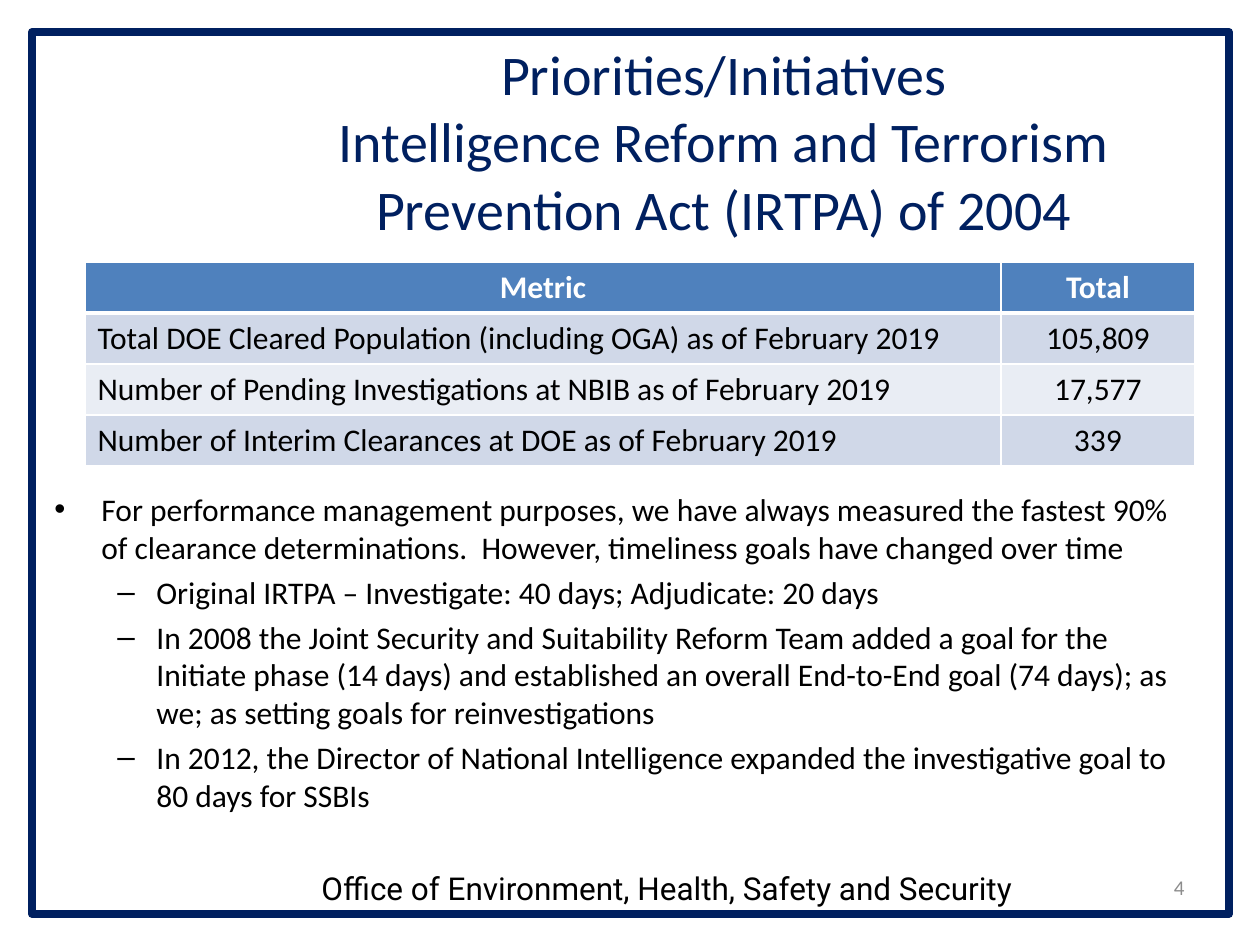
from dataclasses import dataclass

from lxml.etree import SubElement
from pptx import Presentation
from pptx.dml.color import RGBColor
from pptx.enum.shapes import MSO_SHAPE
from pptx.enum.text import MSO_ANCHOR, PP_ALIGN
from pptx.oxml.ns import qn
from pptx.util import Emu, Pt


@dataclass(frozen=True)
class Theme:
    font: str = "Calibri"
    footer_font: str = "Roboto"
    navy: str = "002060"
    black: str = "000000"
    white: str = "FFFFFF"
    gray: str = "8C8C8C"
    header: str = "4F81BD"
    bands: tuple = ("D0D8E8", "E9EDF4")
    title_size: int = 32
    body_size: int = 18
    number_size: int = 12


def px(length):
    return Emu(round(length * 914400 / 126))


class SlideBuilder:
    def __init__(self, slide, theme):
        self.slide = slide
        self.theme = theme

    def style(self, para, size, color, font=None, bold=False):
        para.font.name = font or self.theme.font
        para.font.size = Pt(size)
        para.font.bold = bold
        para.font.color.rgb = RGBColor.from_string(color)

    def frame(self, left, top, width, height):
        shape = self.slide.shapes.add_shape(
            MSO_SHAPE.RECTANGLE, px(left), px(top), px(width), px(height))
        shape.shadow.inherit = False
        shape.fill.background()
        shape.line.color.rgb = RGBColor.from_string(self.theme.navy)
        shape.line.width = Pt(4.5)

    def text_frame(self, left, top, width, height, anchor=MSO_ANCHOR.TOP):
        box = self.slide.shapes.add_textbox(px(left), px(top), px(width), px(height))
        box.text_frame.word_wrap = True
        box.text_frame.vertical_anchor = anchor
        return box.text_frame

    def text(self, place, words, size, color, align=PP_ALIGN.CENTER,
             anchor=MSO_ANCHOR.MIDDLE, font=None):
        para = self.text_frame(*place, anchor).paragraphs[0]
        para.text = words
        para.alignment = align
        self.style(para, size, color, font)

    def bullets(self, place, items):
        levels = [("•", 47, -47), ("–", 102, -39)]
        frame = self.text_frame(*place)
        for index, (level, words) in enumerate(items):
            para = frame.add_paragraph() if index else frame.paragraphs[0]
            para.text = words
            para.level = level
            mark, margin, indent = levels[level]
            properties = para._p.get_or_add_pPr()
            properties.set("marL", str(px(margin)))
            properties.set("indent", str(px(indent)))
            SubElement(properties, qn("a:buFont"), typeface="Arial")
            SubElement(properties, qn("a:buChar"), char=mark)
            if index:
                para.space_before = Pt(4)
            self.style(para, self.theme.body_size, self.theme.black)

    def borders(self, cell, widths):
        properties = cell._tc.get_or_add_tcPr()
        for side, width in widths.items():
            line = SubElement(properties, qn(f"a:ln{side}"), w=str(Pt(width)))
            fill = SubElement(line, qn("a:solidFill"))
            SubElement(fill, qn("a:srgbClr"), val=self.theme.white)

    def table(self, left, top, columns, row_height, rows):
        theme = self.theme
        table = self.slide.shapes.add_table(
            len(rows), len(columns), px(left), px(top),
            px(sum(columns)), px(row_height * len(rows))).table
        for column, width in zip(table.columns, columns):
            column.width = px(width)
        for row_index, row in enumerate(rows):
            table.rows[row_index].height = px(row_height)
            is_header = row_index == 0
            fill = theme.header if is_header else theme.bands[(row_index - 1) % 2]
            widths = {"L": 1, "R": 1, "T": 3 if row_index == 1 else 1,
                      "B": 3 if is_header else 1}
            for column_index, words in enumerate(row):
                cell = table.cell(row_index, column_index)
                self.borders(cell, widths)
                cell.fill.solid()
                cell.fill.fore_color.rgb = RGBColor.from_string(fill)
                para = cell.text_frame.paragraphs[0]
                para.text = words
                centered = is_header or column_index > 0
                para.alignment = PP_ALIGN.CENTER if centered else PP_ALIGN.LEFT
                self.style(para, theme.body_size,
                           theme.white if is_header else theme.black, bold=is_header)


def main():
    deck = Presentation()
    deck.slide_width, deck.slide_height = px(1260), px(945)
    theme = Theme()
    page = SlideBuilder(deck.slides.add_slide(deck.slide_layouts[6]), theme)

    page.frame(32, 32, 1197, 882)
    page.text((284, 863, 766, 50), "Office of Environment, Health, Safety and Security",
              theme.body_size, theme.black, anchor=MSO_ANCHOR.TOP, font=theme.footer_font)
    page.text((242, 95, 964, 91),
              "Priorities/Initiatives\vIntelligence Reform and Terrorism "
              "Prevention Act (IRTPA) of 2004",
              theme.title_size, theme.navy)
    page.bullets((42, 484, 1153, 378), [
        (0, "For performance management purposes, we have always measured the fastest 90% "
            "of clearance determinations.  However, timeliness goals have changed over time"),
        (1, "Original IRTPA – Investigate: 40 days; Adjudicate: 20 days"),
        (1, "In 2008 the Joint Security and Suitability Reform Team added a goal for the "
            "Initiate phase (14 days) and established an overall End-to-End goal (74 days); "
            "as we; as setting goals for reinvestigations"),
        (1, "In 2012, the Director of National Intelligence expanded the investigative goal "
            "to 80 days for SSBIs"),
    ])
    page.table(85, 262, (916, 194), 51, [
        ("Metric", "Total"),
        ("Total DOE Cleared Population (including OGA) as of February 2019", "105,809"),
        ("Number of Pending Investigations at NBIB as of February 2019", "17,577"),
        ("Number of Interim Clearances at DOE as of February 2019", "339"),
    ])
    page.text((1065, 862, 132, 50), "4", theme.number_size, theme.gray, PP_ALIGN.RIGHT)
    deck.save("out.pptx")


if __name__ == "__main__":
    main()
